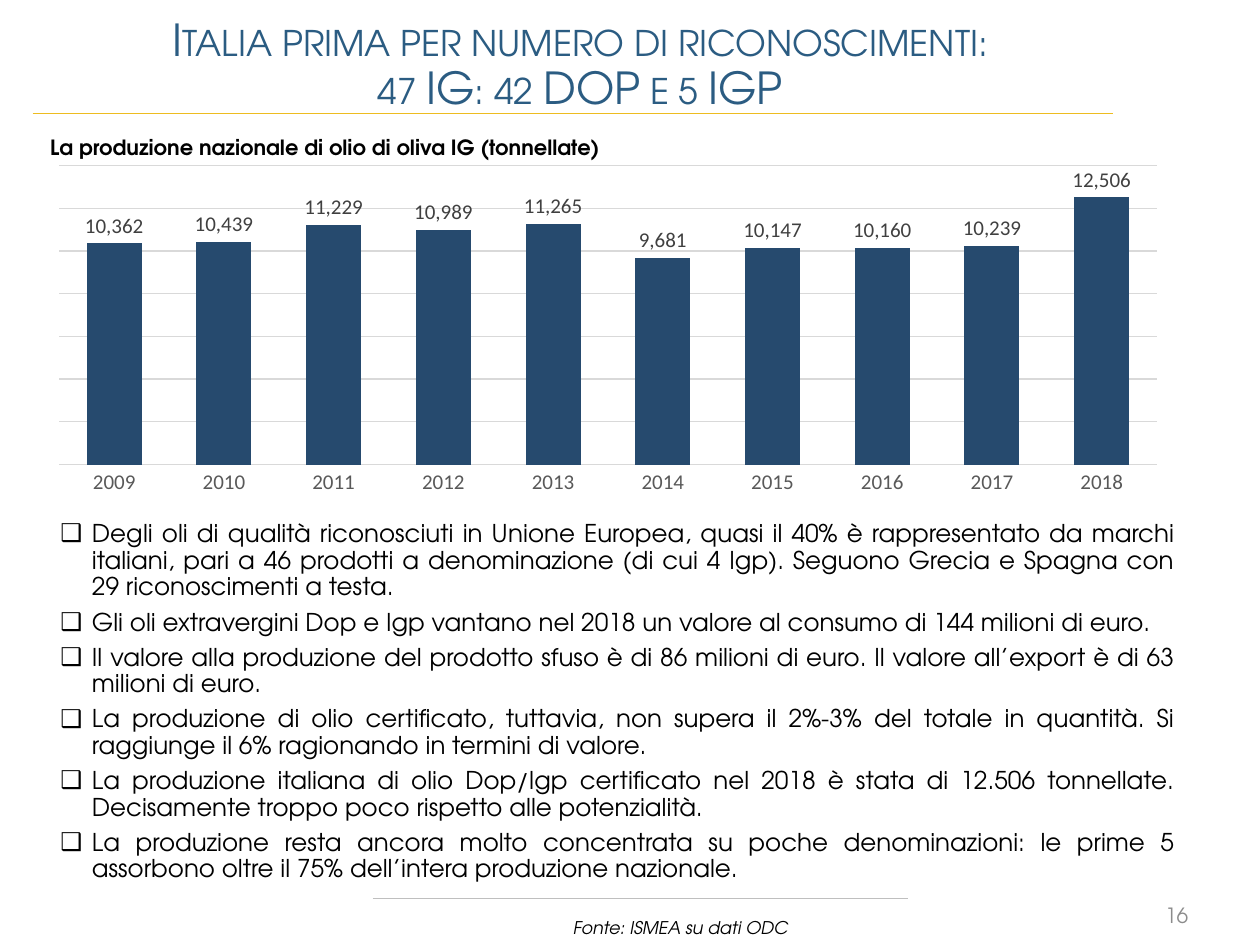
from pptx import Presentation
from pptx import util as u
from pptx.chart.data import CategoryChartData
from pptx.dml.color import RGBColor
from pptx.enum import chart as ch, text as tx
from pptx.oxml import parse_xml
from pptx.oxml.ns import nsdecls

# Content
FACE = "TeX Gyre Adventor"
TITLE = "Italia prima per numero di riconoscimenti:\n47 IG: 42 DOP e 5 IGP"
HEAD = "La produzione nazionale di olio di oliva IG (tonnellate)"
YEARS = [str(year) for year in range(2009, 2019)]
TONS = [10362, 10439, 11229, 10989, 11265, 9681, 10147, 10160, 10239, 12506]
POINTS = [
    "Degli oli di qualità riconosciuti in Unione Europea, quasi il 40% è rappresentato da marchi "
    "italiani, pari a 46 prodotti a denominazione (di cui 4 Igp). Seguono Grecia e Spagna con "
    "29 riconoscimenti a testa.",
    "Gli oli extravergini Dop e Igp vantano nel 2018 un valore al consumo di 144 milioni di euro.",
    "Il valore alla produzione del prodotto sfuso è di 86 milioni di euro. Il valore all’export "
    "è di 63 milioni di euro.",
    "La produzione di olio certificato, tuttavia, non supera il 2%-3% del totale in quantità. "
    "Si raggiunge il 6% ragionando in termini di valore.",
    "La produzione italiana di olio Dop/Igp certificato nel 2018 è stata di 12.506 tonnellate. "
    "Decisamente troppo poco rispetto alle potenzialità.",
    "La produzione resta ancora molto concentrata su poche denominazioni: le prime 5 assorbono "
    "oltre il 75% dell’intera produzione nazionale.",
]
SOURCE = "Fonte: ISMEA su dati ODC"
# Rules: left, right, top, colour, width
RULES = [(2.96, 7.21, 7.13, "BFBFBF", 0.25), (0.26, 8.83, 0.9, "EDBC20", 0.5)]


def tint(color, code):
    color.rgb = RGBColor.from_string(code)


def style(font, size, code, face=FACE):
    font.name, font.size = face, u.Pt(size)
    tint(font.color, code)


def place(shape, *box):
    shape.left, shape.top, shape.width, shape.height = map(u.Inches, box)


def fill(shape, words, size, code, align, anchor=tx.MSO_ANCHOR.TOP):
    frame = shape.text_frame
    frame.text = words
    frame.word_wrap = True
    frame.auto_size = tx.MSO_AUTO_SIZE.NONE
    frame.vertical_anchor = anchor
    for para in frame.paragraphs:
        para.alignment = align
        for run in para.runs:
            style(run.font, size, code)
    return frame


def label(box, words, size, code, align=tx.PP_ALIGN.LEFT, anchor=tx.MSO_ANCHOR.TOP):
    shape = slide.shapes.add_textbox(*map(u.Inches, box))
    return fill(shape, words, size, code, align, anchor).paragraphs[0].runs[0].font


deck = Presentation()
deck.slide_width, deck.slide_height = u.Inches(10), u.Inches(7.5)
slide = deck.slides.add_slide(deck.slide_layouts[1])

# Rules
for left, right, top, code, width in RULES:
    rule = slide.shapes.add_connector(1, *map(u.Inches, (left, top, right, top)))
    tint(rule.line.color, code)
    rule.line.width = u.Pt(width)
    rule._element.spPr.append(parse_xml(f"<a:effectLst {nsdecls('a')}/>"))

# Title in small capitals
title = slide.shapes.title
place(title, 0.43, 0.25, 8.35, 0.55)
frame = fill(title, TITLE, 25.2, "2B5C82", tx.PP_ALIGN.CENTER, tx.MSO_ANCHOR.MIDDLE)
for para in frame.paragraphs:
    para.line_spacing = 0.9
    para.runs[0].font._element.set("cap", "small")

# Small labels
label((0.3, 1.02, 5, 0.3), HEAD, 12, "000000").bold = True
label((4.45, 7.23, 3.18, 0.27), SOURCE, 10, "000000").italic = True
label((9.09, 7.13, 0.44, 0.26), "16", 12, "8C8C8C", tx.PP_ALIGN.RIGHT, tx.MSO_ANCHOR.MIDDLE)

# Chart
data = CategoryChartData()
data.categories = YEARS
data.add_series("Tonnellate", TONS)
chart = slide.shapes.add_chart(ch.XL_CHART_TYPE.COLUMN_CLUSTERED,
                               *map(u.Inches, (0.29, 1.26, 9.07, 2.72)), data).chart
style(chart.font, 10, "000000", "Calibri")
chart.has_legend = chart.has_title = False

years = chart.category_axis
years.major_tick_mark = ch.XL_TICK_MARK.NONE
style(years.tick_labels.font, 12, "595959", "Calibri")
tint(years.format.line.color, "D9D9D9")
years.format.line.width = u.Pt(1)

tons = chart.value_axis
tons.visible = False
tons.minimum_scale, tons.maximum_scale, tons.major_unit = 0, 14000, 2000
grid = tons.major_gridlines.format.line
tint(grid.color, "D9D9D9")
grid.width = u.Pt(0.75)

plot = chart.plots[0]
plot.gap_width, plot.overlap, plot.vary_by_categories = 100, -24, False
bars = plot.series[0].format.fill
bars.solid()
tint(bars.fore_color, "264A6E")
plot.has_data_labels = True
marks = plot.data_labels
marks.show_value = True
marks.number_format, marks.number_format_is_linked = "#,##0", False
marks.position = ch.XL_LABEL_POSITION.OUTSIDE_END
style(marks.font, 12, "404040", "Calibri")

# Bullet list
body = slide.placeholders[1]
place(body, 0.38, 4.09, 9.05, 2.76)
for para in fill(body, "\n".join(POINTS), 14, "000000", tx.PP_ALIGN.JUSTIFY).paragraphs:
    para.line_spacing = 0.9
    para.space_before, para.space_after = u.Pt(0), u.Pt(5)
    props = para._p.get_or_add_pPr()
    props.set("marL", str(u.Inches(0.25)))
    props.set("indent", str(u.Inches(-0.25)))
    props.append(parse_xml(f'<a:buChar {nsdecls("a")} char="❑"/>'))

deck.save("out.pptx")
